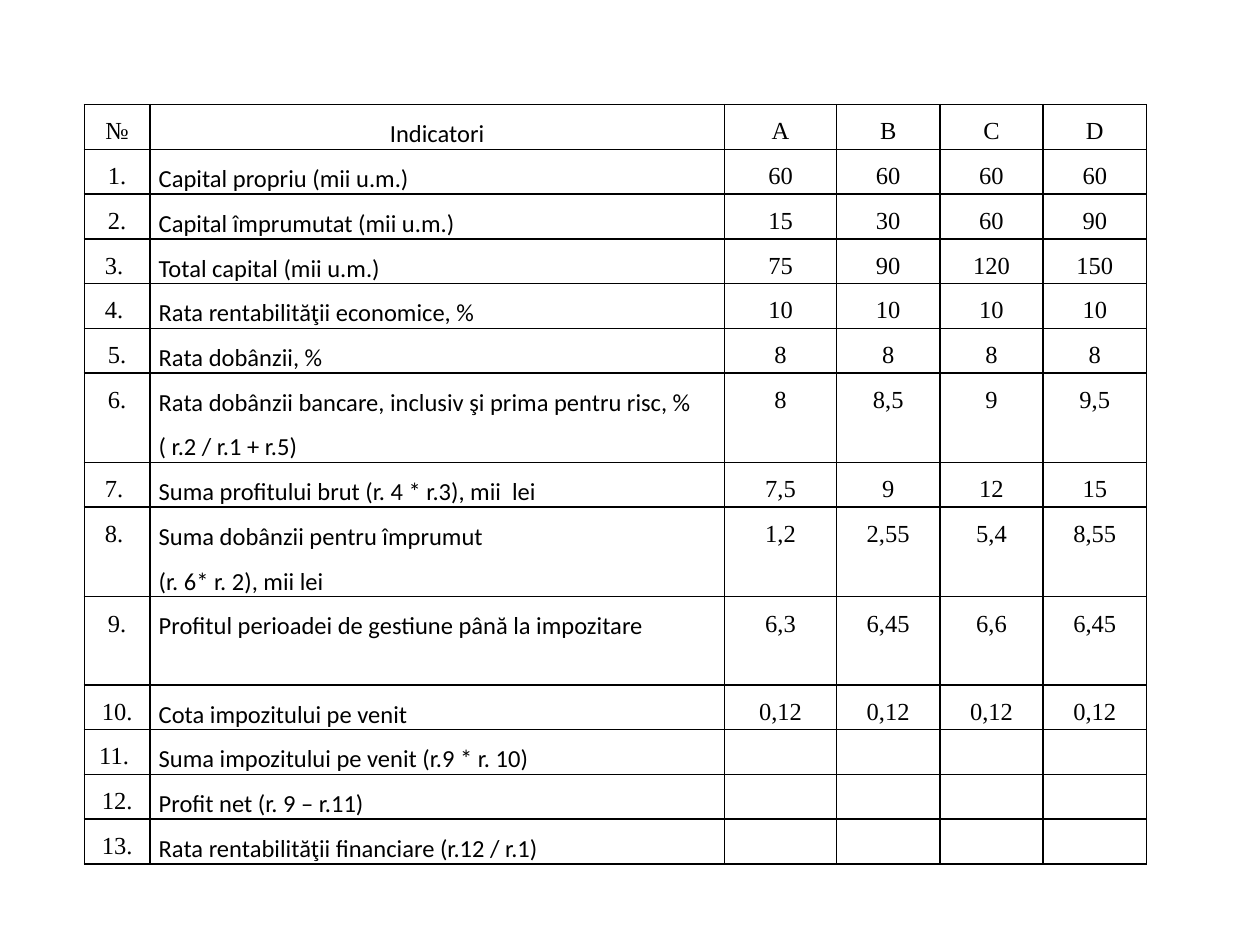
import pptx
import pptx.oxml
import pptx.util
from dataclasses import dataclass
from lxml import etree
from pptx.dml.color import RGBColor
from pptx.enum.text import PP_ALIGN
from pptx.oxml.ns import qn
from pptx.util import Inches, Pt


@dataclass(frozen=True)
class Theme:
    ink: RGBColor = RGBColor(0, 0, 0)
    label_font: str = "Calibri"
    figure_font: str = "Times New Roman"
    text_size: int = Pt(14)
    border_width: int = Pt(1)
    line_spacing: float = 1.5


THEME = Theme()
LABEL_COLUMN = 1
COLUMN_WIDTHS = [0.52, 4.56, 0.89, 0.82, 0.82, 0.82]
ROW_HEIGHT = 0.35
DOUBLE_ROWS = {6, 8, 9}

# Number, indicator and one figure for each variant
ROWS = [
    ["№", "Indicatori", "A", "B", "C", "D"],
    ["1.", "Capital propriu (mii u.m.)", "60", "60", "60", "60"],
    ["2.", "Capital împrumutat (mii u.m.)", "15", "30", "60", "90"],
    ["3. ", "Total capital (mii u.m.)", "75", "90", "120", "150"],
    ["4. ", "Rata rentabilităţii economice, %", "10", "10", "10", "10"],
    ["5.", "Rata dobânzii, %", "8", "8", "8", "8"],
    ["6.", "Rata dobânzii bancare, inclusiv şi prima pentru risc, % \n( r.2 / r.1 + r.5)",
     "8", "8,5", "9", "9,5"],
    ["7. ", "Suma profitului brut (r. 4 * r.3), mii  lei", "7,5", "9", "12", "15"],
    ["8. ", "Suma dobânzii pentru împrumut \n(r. 6* r. 2), mii lei",
     "1,2", "2,55", "5,4", "8,55"],
    ["9.", "Profitul perioadei de gestiune până la impozitare",
     "6,3", "6,45", "6,6", "6,45"],
    ["10.", "Cota impozitului pe venit", "0,12", "0,12", "0,12", "0,12"],
    ["11. ", "Suma impozitului pe venit (r.9 * r. 10)", "", "", "", ""],
    ["12.", "Profit net (r. 9 – r.11)", "", "", "", ""],
    ["13.", "Rata rentabilităţii financiare (r.12 / r.1)", "", "", "", ""],
]


def apply_format(target, values):
    for name, value in values.items():
        setattr(target, name, value)


def add_borders(cell):
    properties = cell._tc.get_or_add_tcPr()
    for position, side in enumerate(["a:lnL", "a:lnR", "a:lnT", "a:lnB"]):
        line = etree.Element(qn(side), w=str(THEME.border_width))
        fill = etree.SubElement(line, qn("a:solidFill"))
        etree.SubElement(fill, qn("a:srgbClr"), val=str(THEME.ink))
        properties.insert(position, line)


def fill_cell(cell, text, font_name, alignment):
    apply_format(cell, {
        "margin_left": Inches(0.07), "margin_right": Inches(0.07),
        "margin_top": 0, "margin_bottom": 0,
    })
    cell.fill.background()
    add_borders(cell)
    if not text:
        return
    cell.text_frame.text = text
    for paragraph in cell.text_frame.paragraphs:
        apply_format(paragraph, {
            "alignment": alignment, "line_spacing": THEME.line_spacing,
        })
        for run in paragraph.runs:
            apply_format(run.font, {"name": font_name, "size": THEME.text_size})
            run.font.color.rgb = THEME.ink


def add_indicator_table(slide, left, top, width, height):
    shape = slide.shapes.add_table(
        len(ROWS), len(COLUMN_WIDTHS), left, top, width, height)
    table = shape.table
    apply_format(table, {"first_row": False, "horz_banding": False})

    # Grid: columns share the width, double rows take two units of height
    for column, share in zip(table.columns, COLUMN_WIDTHS):
        column.width = int(width * share / sum(COLUMN_WIDTHS))
    unit = height / (len(ROWS) + len(DOUBLE_ROWS))
    for index, row in enumerate(table.rows):
        row.height = int(unit * (2 if index in DOUBLE_ROWS else 1))

    # Cells
    for row_index, values in enumerate(ROWS):
        for column_index, text in enumerate(values):
            is_label = column_index == LABEL_COLUMN
            fill_cell(
                table.cell(row_index, column_index), text,
                THEME.label_font if is_label else THEME.figure_font,
                PP_ALIGN.JUSTIFY if is_label and row_index else PP_ALIGN.CENTER)


def main():
    presentation = pptx.Presentation()
    presentation.slide_width = Inches(10)
    presentation.slide_height = Inches(7.5)
    slide = presentation.slides.add_slide(presentation.slide_layouts[6])
    units = len(ROWS) + len(DOUBLE_ROWS)
    add_indicator_table(
        slide, Inches(0.67), Inches(0.83),
        Inches(sum(COLUMN_WIDTHS)), Inches(ROW_HEIGHT * units))
    presentation.save("out.pptx")


if __name__ == "__main__":
    main()
